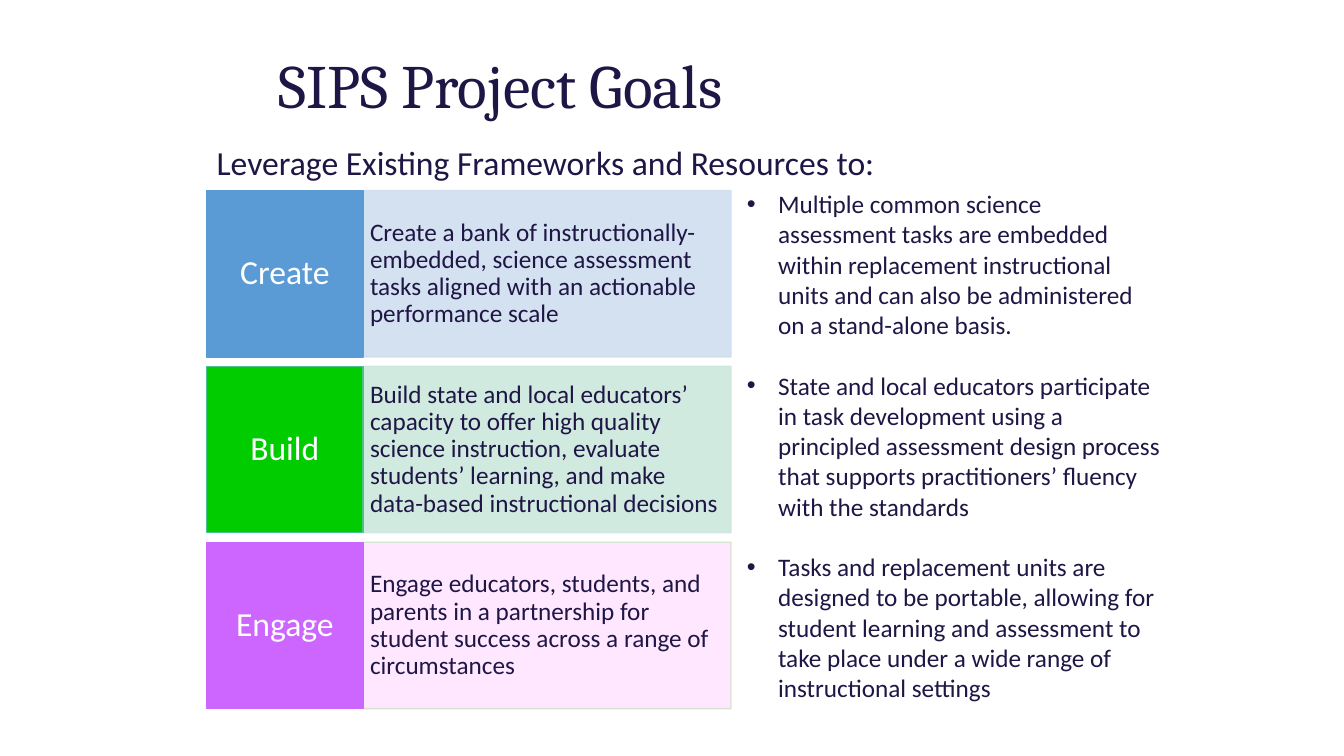
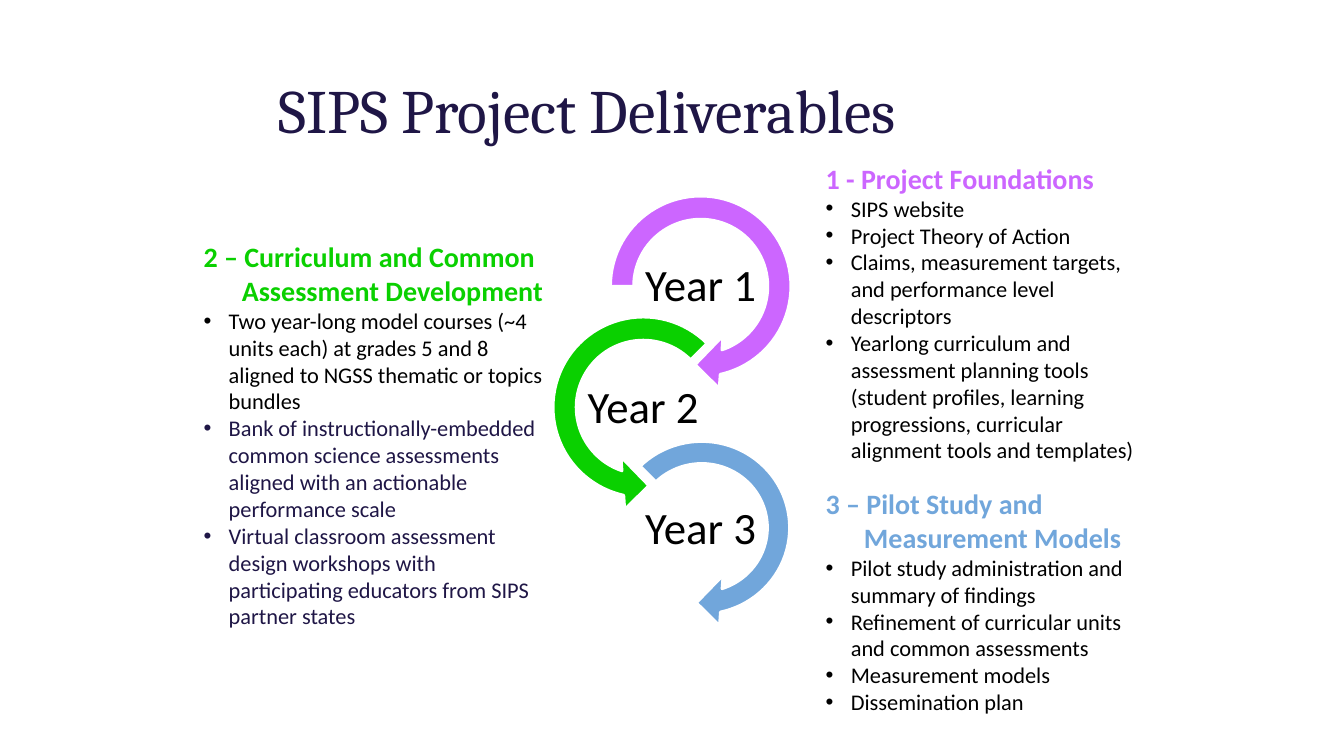
from pptx import Presentation
from pptx.dml.color import RGBColor
from pptx.enum.shapes import MSO_SHAPE as Preset
from pptx.enum.text import MSO_ANCHOR as Anchor, MSO_AUTO_SIZE as AutoSize, PP_ALIGN as Align
from pptx.oxml import parse_xml
from pptx.oxml.ns import nsdecls, qn
from pptx.util import Emu, Pt

SCALE = 9144
NAVY, BLACK, WHITE = "1F1646", "000000", "FFFFFF"
PURPLE, GREEN, BLUE = "CC66FF", "0AD000", "71A6DB"
BODY_FONT, TITLE_FONT = "Calibri", "Cambria"

GOALS = [
    dict(name="Create", tab="5B9BD5", edge="599BD5", panel="CFDEEF", panel_edge="CFDEEF", alpha=89,
         goal="Create a bank of instructionally-embedded, science assessment tasks aligned "
              "with an actionable performance scale",
         detail="Multiple common science assessment tasks are embedded within replacement "
                "instructional units and can also be administered on a stand-alone basis.",
         detail_width=424),
    dict(name="Build", tab="00CC00", edge="4CC38C", panel="CCE8DD", panel_edge="CCE8DD", alpha=89,
         goal="Build state and local educators’ capacity to offer high quality science "
              "instruction, evaluate students’ learning, and make data-based instructional decisions",
         detail="State and local educators participate in task development using a principled "
                "assessment design process that supports practitioners’ fluency with the standards",
         detail_width=436),
    dict(name="Engage", tab=PURPLE, edge=PURPLE, panel="FF99FF", panel_edge="D3E1CC", alpha=22,
         goal="Engage educators, students, and parents in a partnership for student success "
              "across a range of circumstances",
         detail="Tasks and replacement units are designed to be portable, allowing for student "
                "learning and assessment to take place under a wide range of instructional settings",
         detail_width=436),
]

YEARS = [
    dict(text="Year 1", box=(591, 180, 208, 208), label=(637, 256), color=PURPLE,
         preset=Preset.CIRCULAR_ARROW, end=45, start=108),
    dict(text="Year 2", box=(534, 300, 208, 208), label=(580, 377), color=GREEN,
         preset=Preset.LEFT_CIRCULAR_ARROW, end=63, start=189),
    dict(text="Year 3", box=(595, 424, 202, 199), label=(637, 497), color=BLUE,
         preset=Preset.CIRCULAR_ARROW, end=45, start=135),
]

DELIVERABLES = [
    dict(box=(809, 155, 349, 313), heading="1 - Project Foundations", color=PURPLE, hang=0, items=[
        ("SIPS website", BLACK),
        ("Project Theory of Action", BLACK),
        ("Claims, measurement targets, and performance level descriptors", BLACK),
        ("Yearlong curriculum and assessment planning tools (student profiles, learning "
         "progressions, curricular alignment tools and templates)", BLACK)]),
    dict(box=(192, 233, 359, 427), heading="2 – Curriculum and Common Assessment Development",
         color=GREEN, hang=38, items=[
        ("Two year-long model courses (~4 units each) at grades 5 and 8 aligned to NGSS "
         "thematic or topics bundles", BLACK),
        ("Bank of instructionally-embedded common science assessments aligned with an "
         "actionable performance scale", NAVY),
        ("Virtual classroom assessment design workshops with participating educators from "
         "SIPS partner states", NAVY)]),
    dict(box=(809, 478, 349, 239), heading="3 – Pilot Study and Measurement Models",
         color=BLUE, hang=38, items=[
        ("Pilot study administration and summary of findings", BLACK),
        ("Refinement of curricular units and common assessments", BLACK),
        ("Measurement models", BLACK),
        ("Dissemination plan", BLACK)]),
]


def px(value):
    return Emu(round(value * SCALE))


def box_px(box):
    return [px(value) for value in box]


def rgb(color):
    return RGBColor.from_string(color)


def setup_frame(frame, anchor=Anchor.TOP, insets=(10, 5)):
    frame.word_wrap = True
    frame.auto_size = AutoSize.NONE
    frame.vertical_anchor = anchor
    frame.margin_left = frame.margin_right = px(insets[0])
    frame.margin_top = frame.margin_bottom = px(insets[1])
    return frame


def write(paragraph, text, size=18, color=NAVY, font=BODY_FONT, bold=False,
          align=Align.LEFT, spacing=None, left=0, first=0, bullet=False):
    properties = paragraph._p.get_or_add_pPr()
    properties.set("marL", str(px(left)))
    properties.set("indent", str(px(first)))
    if bullet:
        for element in (f'<a:buClr {nsdecls("a")}><a:srgbClr val="{color}"/></a:buClr>',
                        f'<a:buFont {nsdecls("a")} typeface="Arial"/>',
                        f'<a:buChar {nsdecls("a")} char="•"/>'):
            properties.append(parse_xml(element))
    paragraph.alignment = align
    if spacing:
        paragraph.line_spacing = spacing
    run = paragraph.add_run()
    run.text = text
    run.font.size = Pt(size)
    run.font.name = font
    run.font.bold = bold
    run.font.color.rgb = rgb(color)


def add_text(slide, box, text, anchor=Anchor.TOP, insets=(10, 5), **style):
    shape = slide.shapes.add_textbox(*box_px(box))
    write(setup_frame(shape.text_frame, anchor, insets).paragraphs[0], text, **style)


def paint(shape, fill, line, weight, alphas=()):
    shape.shadow.inherit = False
    shape.fill.solid()
    shape.fill.fore_color.rgb = rgb(fill)
    shape.line.color.rgb = rgb(line)
    shape.line.width = Pt(weight)
    for color, alpha in zip(shape.element.spPr.iter(qn("a:srgbClr")), alphas):
        color.append(parse_xml(f'<a:alpha {nsdecls("a")} val="{alpha * 1000}"/>'))


def add_panel(slide, box, text, fill, line, insets, alphas=(), **style):
    shape = slide.shapes.add_shape(Preset.RECTANGLE, *box_px(box))
    paint(shape, fill, line, 1, alphas)
    frame = setup_frame(shape.text_frame, Anchor.MIDDLE, insets)
    write(frame.paragraphs[0], text, spacing=0.9, **style)


def add_titled_slide(presentation, title, box, first=0):
    slide = presentation.slides.add_slide(presentation.slide_layouts[5])
    shape = slide.shapes.title
    shape.left, shape.top, shape.width, shape.height = box_px(box)
    write(setup_frame(shape.text_frame, Anchor.MIDDLE).paragraphs[0], title,
          size=44, font=TITLE_FONT, spacing=0.9, first=first)
    return slide


def add_goal_row(slide, box, goal):
    left, top, width, height = box
    tab_width = 155
    add_panel(slide, (left + tab_width, top, width - tab_width, height), goal["goal"],
              goal["panel"], goal["panel_edge"], (7, 0), (goal["alpha"], 89))
    add_panel(slide, (left, top, tab_width, height), goal["name"], goal["tab"], goal["edge"],
              (5, 16), size=24, color=WHITE, align=Align.CENTER)


def add_year(slide, text, box, label, color, preset, end, start):
    arrow = slide.shapes.add_shape(preset, *box_px(box))
    for index, value in enumerate((0.11, 11.42, end, start, 0.125)):
        arrow.adjustments[index] = value
    paint(arrow, color, WHITE, 2)
    add_text(slide, (*label, 116, 58), text, Anchor.MIDDLE, (2, 2),
             size=32, color=BLACK, align=Align.CENTER, spacing=0.9)


def add_deliverables(slide, box, heading, color, hang, items):
    frame = setup_frame(slide.shapes.add_textbox(*box_px(box)).text_frame)
    write(frame.paragraphs[0], heading, size=20, color=color, bold=True, left=hang, first=-hang)
    for text, item_color in items:
        write(frame.add_paragraph(), text, size=16, color=item_color,
              left=25, first=-25, bullet=True)


def build_goals(presentation):
    slide = add_titled_slide(presentation, "SIPS Project Goals", (216, 25, 900, 125), first=50)
    add_text(slide, (205, 136, 817, 50), "Leverage Existing Frameworks and Resources to:", size=24)
    for index, goal in enumerate(GOALS):
        add_goal_row(slide, (205, 189 + 174.5 * index, 520, 165), goal)
        add_text(slide, (731, 181 + 180 * index, goal["detail_width"], 162), goal["detail"],
                 Anchor.MIDDLE, left=31, first=-31, bullet=True)


def build_deliverables(presentation):
    slide = add_titled_slide(presentation, "SIPS Project Deliverables", (266, 40, 975, 145))
    for year in YEARS:
        add_year(slide, **year)
    for deliverable in DELIVERABLES:
        add_deliverables(slide, **deliverable)


def main():
    presentation = Presentation()
    presentation.slide_width, presentation.slide_height = px(1333), px(750)
    build_goals(presentation)
    build_deliverables(presentation)
    presentation.save("out.pptx")


if __name__ == "__main__":
    main()
